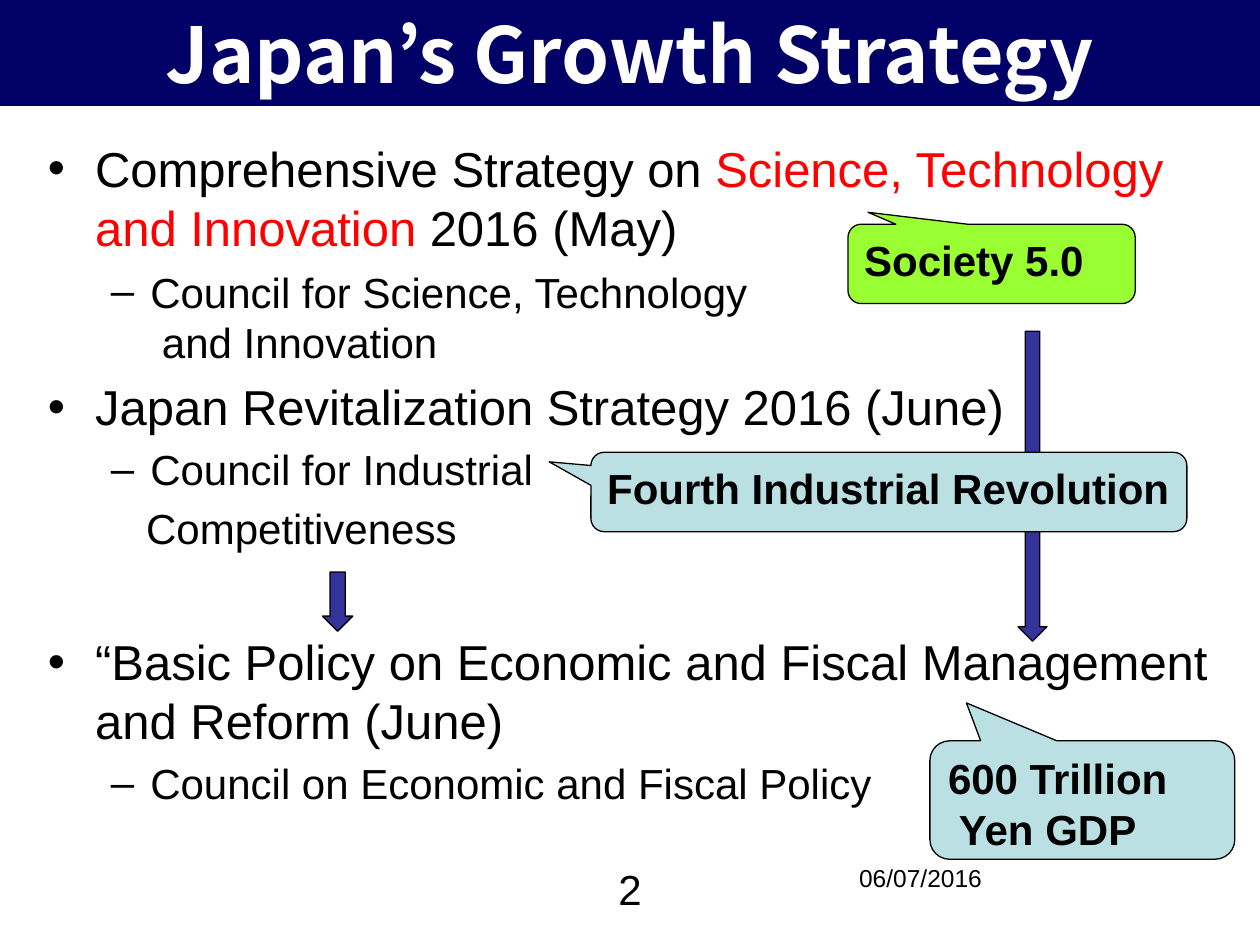
import pptx
import pptx.util
import pptx.dml.color
import pptx.enum.shapes
import pptx.enum.text
import pptx.oxml.ns
import lxml.etree

Inches, Pt = pptx.util.Inches, pptx.util.Pt
SHAPE = pptx.enum.shapes.MSO_SHAPE
ALIGN = pptx.enum.text.PP_ALIGN
ANCHOR = pptx.enum.text.MSO_ANCHOR

NAVY, BLUE, TEAL, GREEN = "000066", "333399", "BBE0E3", "99FF33"
BLACK, WHITE, RED = "000000", "FFFFFF", "FF0000"


def rgb(value):
    return pptx.dml.color.RGBColor.from_string(value)


class Deck:
    font = "Arial"

    def __init__(self, prs):
        self.s = prs.slides.add_slide(prs.slide_layouts[1])

    def place(self, sp, box):
        sp.left, sp.top, sp.width, sp.height = (Inches(v) for v in box)

    def run(self, p, text, size, color=BLACK, bold=False, font=None):
        for i, line in enumerate(text.split("\n")):
            if i:
                p.add_line_break()
            r = p.add_run()
            r.text = line
            r.font.name = font or self.font
            r.font.size = Pt(size)
            r.font.bold = bold
            r.font.color.rgb = rgb(color)

    def title(self, text, box):
        sp = self.s.shapes.title
        self.place(sp, box)
        sp.fill.solid()
        sp.fill.fore_color.rgb = rgb(NAVY)
        tf = sp.text_frame
        tf.auto_size = pptx.enum.text.MSO_AUTO_SIZE.NONE
        tf.vertical_anchor = ANCHOR.MIDDLE
        p = tf.paragraphs[0]
        p.alignment = ALIGN.CENTER
        self.run(p, text, 44, WHITE, True, "Noto Sans CJK JP")

    def body(self, items, box):
        """Each item is (level, runs, options); a run is (text, color)."""
        sp = self.s.placeholders[1]
        self.place(sp, box)
        tf = sp.text_frame
        tf.auto_size = pptx.enum.text.MSO_AUTO_SIZE.NONE
        for i, (level, runs, options) in enumerate(items):
            p = tf.add_paragraph() if i else tf.paragraphs[0]
            p.level = level
            if not i:
                p.space_before = Pt(0)
            if "before" in options:
                p.space_before = Pt(options["before"])
            if "indent" in options:
                pPr = p._p.get_or_add_pPr()
                pPr.set("marL", str(Inches(options["indent"])))
                pPr.set("indent", "0")
                lxml.etree.SubElement(pPr, pptx.oxml.ns.qn("a:buNone"))
            for text, color in runs:
                self.run(p, text, 24 if level else 28, color)

    def text(self, text, box, size, align=ALIGN.LEFT):
        sp = self.s.shapes.add_textbox(*(Inches(v) for v in box))
        sp.text_frame.word_wrap = True
        p = sp.text_frame.paragraphs[0]
        p.alignment = align
        self.run(p, text, size)

    def shape(self, kind, box, fill):
        sp = self.s.shapes.add_shape(kind, *(Inches(v) for v in box))
        sp.shadow.inherit = False
        sp.fill.solid()
        sp.fill.fore_color.rgb = rgb(fill)
        sp.line.color.rgb = rgb(BLACK)
        sp.line.width = Pt(0.75)
        return sp

    def arrow(self, box):
        self.shape(SHAPE.DOWN_ARROW, box, BLUE)

    def callout(self, text, box, fill, tip):
        sp = self.shape(SHAPE.ROUNDED_RECTANGULAR_CALLOUT, box, fill)
        sp.adjustments[0], sp.adjustments[1] = tip
        tf = sp.text_frame
        tf.word_wrap = True
        tf.vertical_anchor = ANCHOR.TOP
        p = tf.paragraphs[0]
        p.alignment = ALIGN.LEFT
        self.run(p, text, 24, BLACK, True)


def main():
    prs = pptx.Presentation()
    prs.slide_width, prs.slide_height = Inches(10), Inches(7.5)
    deck = Deck(prs)

    # Title band and strategy list
    deck.title("Japan’s Growth Strategy", (0, 0, 10, 0.84))
    deck.body([
        (0, [("Comprehensive Strategy on ", BLACK),
             ("Science, Technology and Innovation ", RED),
             ("2016 (May)", BLACK)], {}),
        (1, [("Council for Science, Technology\n and Innovation", BLACK)], {}),
        (0, [("Japan Revitalization Strategy 2016 (June)", BLACK)], {}),
        (1, [("Council for Industrial", BLACK)], {}),
        (1, [("Competitiveness", BLACK)], {"indent": 0.78}),
        (0, [("“Basic Policy on Economic and Fiscal Management and Reform (June)",
              BLACK)], {"before": 45}),
        (1, [("Council on Economic and Fiscal Policy", BLACK)], {}),
    ], (0.28, 1.05, 9.48, 6.27))

    # Arrows leading to the basic policy
    deck.arrow((8.08, 2.63, 0.23, 2.46))
    deck.arrow((2.56, 4.54, 0.24, 0.47))

    # Callouts
    deck.callout("Society 5.0", (6.73, 1.78, 2.28, 0.63), GREEN, (-0.43, -0.65))
    deck.callout("Fourth Industrial Revolution", (4.69, 3.59, 4.73, 0.63), TEAL,
                 (-0.57, -0.38))
    deck.callout("600 Trillion\n Yen GDP", (7.38, 5.88, 2.42, 0.94), TEAL,
                 (-0.38, -0.82))

    # Date and page number
    deck.text("06/07/2016", (6.72, 6.8, 2.33, 0.52), 14)
    deck.text("2", (4.42, 6.8, 1.16, 0.52), 24, ALIGN.CENTER)

    prs.save("out.pptx")


if __name__ == "__main__":
    main()
